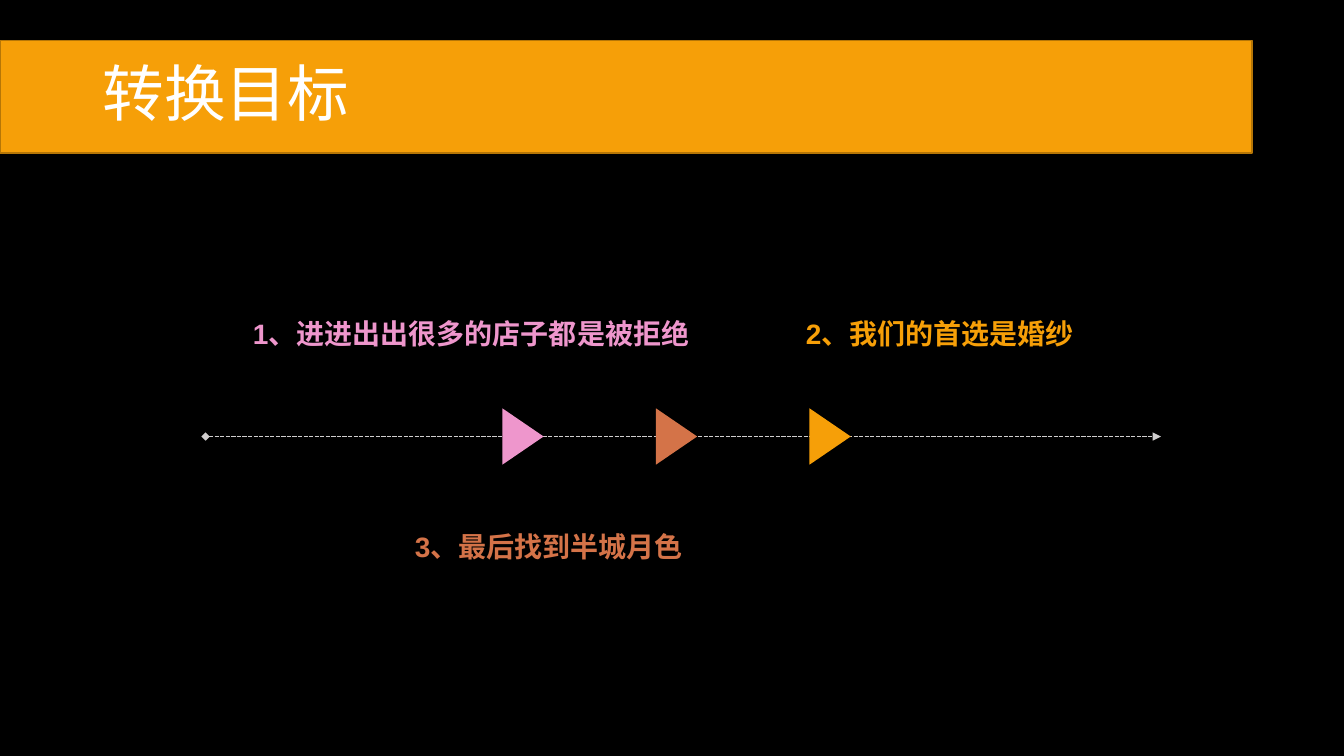
import dataclasses

import pptx
import pptx.dml.color
import pptx.enum.dml
import pptx.enum.shapes
import pptx.enum.text
import pptx.oxml
import pptx.oxml.ns
import pptx.util

Cm = pptx.util.Cm
Pt = pptx.util.Pt
Shape = pptx.enum.shapes.MSO_SHAPE
Align = pptx.enum.text.PP_ALIGN


@dataclasses.dataclass(frozen=True)
class Theme:
    font: str = "Arial"
    back: str = "000000"
    white: str = "FFFFFF"
    gold: str = "F69F08"
    edge: str = "B67606"
    rust: str = "D47348"
    pink: str = "EE96CC"
    grey: str = "D0CECE"
    head: int = 44
    body: int = 20


THEME = Theme()
AXIS = 11  # height of the time line, in cm


def apply(item, values):
    for name, value in values.items():
        setattr(item, name, value)


def color(code):
    return pptx.dml.color.RGBColor.from_string(code)


def paint(fill, code):
    fill.solid()
    fill.fore_color.rgb = color(code)


def add_block(slide, kind, box, fill, edge=None):
    block = slide.shapes.add_shape(kind, *map(Cm, box))
    block.shadow.inherit = False
    paint(block.fill, fill)
    if edge:
        paint(block.line.fill, edge)
        block.line.width = Pt(1)
    else:
        block.line.fill.background()
    return block


def add_text(slide, text, box, size, code, bold, align, space):
    frame = slide.shapes.add_textbox(*map(Cm, box)).text_frame
    apply(frame, {
        "word_wrap": True,
        "vertical_anchor": pptx.enum.text.MSO_ANCHOR.MIDDLE,
    })
    para = frame.paragraphs[0]
    apply(para, {"alignment": align, "line_spacing": space})
    run = para.add_run()
    run.text = text
    apply(run.font, {"name": THEME.font, "size": Pt(size), "bold": bold})
    run.font.color.rgb = color(code)


def add_axis(slide, left, right):
    """Draw the dashed time line, from a diamond to an arrowhead."""
    axis = slide.shapes.add_connector(
        pptx.enum.shapes.MSO_CONNECTOR.STRAIGHT,
        Cm(left), Cm(AXIS), Cm(right), Cm(AXIS))
    paint(axis.line.fill, THEME.grey)
    apply(axis.line, {
        "width": Pt(1),
        "dash_style": pptx.enum.dml.MSO_LINE.SQUARE_DOT,
    })
    props = axis.element.spPr
    line = props.get_or_add_ln()
    space = pptx.oxml.ns.nsdecls("a")
    for tag, end in (("headEnd", "diamond"), ("tailEnd", "triangle")):
        line.append(pptx.oxml.parse_xml(f'<a:{tag} {space} type="{end}"/>'))
    props.append(pptx.oxml.parse_xml(f"<a:effectLst {space}/>"))


def add_marks(slide, codes):
    """Place triangles at equal steps, pointing along the time line."""
    left, step, width, height = 12.47, 3.87, 1.42, 1.04
    for index, code in enumerate(codes):
        box = (left + index * step, AXIS - height / 2, width, height)
        mark = add_block(slide, Shape.ISOSCELES_TRIANGLE, box, code)
        mark.rotation = 90


def main():
    deck = pptx.Presentation()
    apply(deck, {"slide_width": Cm(33.87), "slide_height": Cm(19.05)})
    slide = deck.slides.add_slide(deck.slide_layouts[6])
    paint(slide.background.fill, THEME.back)

    add_block(slide, Shape.RECTANGLE, (0, 1.02, 31.55, 2.84),
              THEME.gold, THEME.edge)
    add_text(slide, "转换目标", (2.34, 1.02, 29.21, 2.84),
             THEME.head, THEME.white, False, Align.LEFT, 0.9)

    add_axis(slide, 5.18, 29.26)
    add_marks(slide, (THEME.pink, THEME.rust, THEME.gold))

    steps = (
        ("1、进进出出很多的店子都是被拒绝", (5.84, 6.6, 12.07, 3.53), THEME.pink),
        ("2、我们的首选是婚纱", (18.11, 6.63, 11.15, 3.45), THEME.gold),
        ("3、最后找到半城月色", (7.98, 11.96, 11.71, 3.53), THEME.rust),
    )
    for text, box, code in steps:
        add_text(slide, text, box, THEME.body, code, True, Align.CENTER, 1.1)

    deck.save("out.pptx")


if __name__ == "__main__":
    main()
